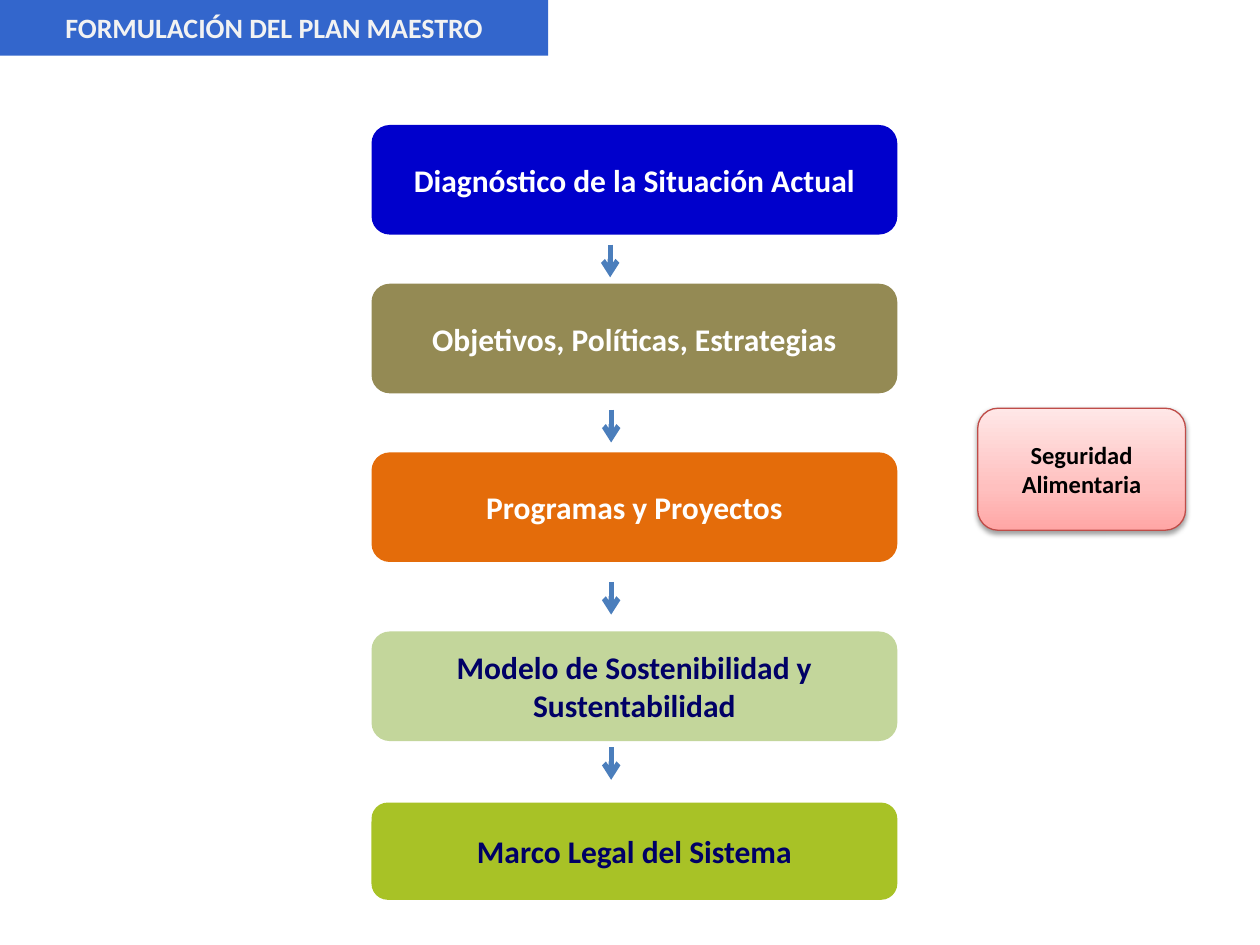
from lxml import etree
from pptx import Presentation
from pptx.dml.color import RGBColor
from pptx.enum.shapes import MSO_CONNECTOR, MSO_SHAPE
from pptx.enum.text import MSO_ANCHOR, MSO_AUTO_SIZE, PP_ALIGN
from pptx.oxml import parse_xml
from pptx.oxml.ns import qn
from pptx.util import Cm, Pt

COLORS = {
    "banner": "3366CC", "banner_text": "F2F2F2",
    "diagnosis": "0000CC", "goals": "948A54", "programs": "E46C0A",
    "model": "C3D69B", "legal": "A8C226",
    "white": "FFFFFF", "navy": "000066", "black": "000000",
    "arrow": "4B7EBC", "food_line": "BF4C48",
}
FOOD_GRADIENT = [(0, "FFA6A5"), (35, "FFC0BF"), (100, "FFE7E7")]
A_NS = 'xmlns:a="http://schemas.openxmlformats.org/drawingml/2006/main"'


def rgb(name):
    return RGBColor.from_string(COLORS[name])


def write_label(shape, text, size, color):
    """Put bold text in the middle of the shape."""
    frame = shape.text_frame
    frame.text = text
    frame_format = {"word_wrap": True, "auto_size": MSO_AUTO_SIZE.NONE,
                    "vertical_anchor": MSO_ANCHOR.MIDDLE}
    for attribute, value in frame_format.items():
        setattr(frame, attribute, value)
    paragraph = frame.paragraphs[0]
    paragraph.alignment = PP_ALIGN.CENTER
    font = paragraph.runs[0].font
    for attribute, value in {"name": "Calibri", "size": Pt(size), "bold": True}.items():
        setattr(font, attribute, value)
    font.color.rgb = rgb(color)


prs = Presentation()
prs.slide_width, prs.slide_height = Cm(25.4), Cm(19.05)
slide = prs.slides.add_slide(prs.slide_layouts[5])

# Heading banner
banner = slide.shapes.title
banner_place = {"left": Cm(0), "top": Cm(0), "width": Cm(11.05), "height": Cm(1.12)}
for attribute, value in banner_place.items():
    setattr(banner, attribute, value)
banner.fill.solid()
banner.fill.fore_color.rgb = rgb("banner")
write_label(banner, "FORMULACIÓN DEL PLAN MAESTRO", 16, "banner_text")

# Stages of the plan: text, top, height, fill, text colour
stages = [
    ("Diagnóstico de la Situación Actual", 2.52, 2.21, "diagnosis", "white"),
    ("Objetivos, Políticas, Estrategias", 5.72, 2.21, "goals", "white"),
    ("Programas y Proyectos", 9.12, 2.21, "programs", "white"),
    ("Modelo de Sostenibilidad y Sustentabilidad", 12.73, 2.21, "model", "navy"),
    ("Marco Legal del Sistema", 16.18, 1.96, "legal", "navy"),
]
for text, top, height, fill, text_color in stages:
    stage = slide.shapes.add_shape(
        MSO_SHAPE.ROUNDED_RECTANGLE, Cm(7.49), Cm(top), Cm(10.6), Cm(height))
    stage.shadow.inherit = False
    stage.fill.solid()
    stage.fill.fore_color.rgb = rgb(fill)
    stage.line.fill.background()
    write_label(stage, text, 18, text_color)

# Short arrows in the gaps between stages
for x, top in [(12.3, 4.93), (12.32, 8.26), (12.32, 11.73), (12.32, 15.06)]:
    arrow = slide.shapes.add_connector(
        MSO_CONNECTOR.STRAIGHT, Cm(x), Cm(top), Cm(x), Cm(top + 0.66))
    arrow.line.color.rgb = rgb("arrow")
    arrow.line.width = Pt(3)
    etree.SubElement(arrow.line._get_or_add_ln(), qn("a:tailEnd"), type="arrow")
    etree.SubElement(arrow._element.spPr, qn("a:effectLst"))

# Food security, beside the stages
food = slide.shapes.add_shape(
    MSO_SHAPE.ROUNDED_RECTANGLE, Cm(19.71), Cm(8.23), Cm(4.19), Cm(2.46))
food.fill.gradient()
food.fill.gradient_angle = 90
stops = food._element.spPr.find(qn("a:gradFill")).find(qn("a:gsLst"))
for stop in list(stops):
    stops.remove(stop)
for percent, color in FOOD_GRADIENT:
    stops.append(parse_xml(
        f'<a:gs {A_NS} pos="{percent * 1000}"><a:srgbClr val="{color}"/></a:gs>'))
food.line.color.rgb = rgb("food_line")
food.line.width = Pt(0.75)
food.shadow.inherit = False
food._element.spPr.find(qn("a:effectLst")).append(parse_xml(
    f'<a:outerShdw {A_NS} blurRad="{Pt(3.1)}" dist="{Pt(1.6)}" dir="5400000" '
    f'rotWithShape="0"><a:srgbClr val="{COLORS["black"]}"><a:alpha val="38000"/>'
    '</a:srgbClr></a:outerShdw>'))
write_label(food, "Seguridad Alimentaria", 14, "black")

prs.save("out.pptx")
